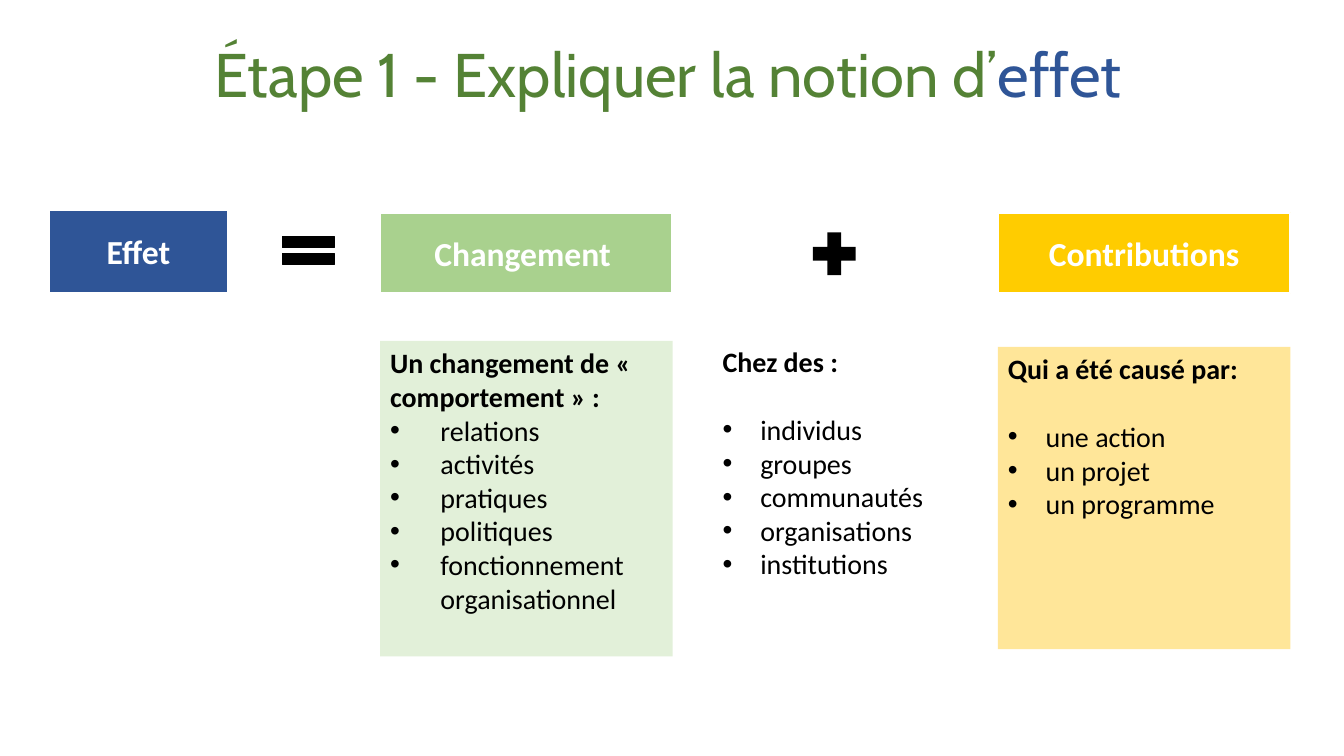
import pptx
import pptx.util
import pptx.dml.color
import pptx.enum.shapes
import pptx.enum.text
import pptx.oxml.ns
import lxml.etree
from dataclasses import dataclass

Cm = pptx.util.Cm
Pt = pptx.util.Pt
Shape = pptx.enum.shapes.MSO_SHAPE
Anchor = pptx.enum.text.MSO_ANCHOR
Align = pptx.enum.text.PP_ALIGN


@dataclass(frozen=True)
class Theme:
    title_font: str = "Cabin"
    body_font: str = "Calibri"
    title_size: int = 44
    label_size: int = 24
    body_size: int = 20
    heading_gap: float = 24.4
    white: str = "FFFFFF"
    black: str = "000000"
    blue: str = "2F5597"
    title_green: str = "548235"
    green: str = "A9D18E"
    pale_green: str = "E2F0D9"
    yellow: str = "FFCC00"
    pale_yellow: str = "FFE699"


THEME = Theme()
COLUMN_WIDTH = 7.37
CHANGE_LEFT = 9.58
CAUSE_LEFT = 25.15

TITLE = [("Étape 1 - Expliquer la notion d’", THEME.title_green), ("effet", THEME.blue)]
TITLE_AREA = (3.15, 1.17, 27.38, 1.55)

LABELS = [
    ("Effet", (1.24, 5.28, 4.5, 2.11), THEME.blue),
    ("Changement ", (CHANGE_LEFT, 5.36, COLUMN_WIDTH, 2.03), THEME.green),
    ("Contributions", (CAUSE_LEFT, 5.36, COLUMN_WIDTH, 2.03), THEME.yellow),
]

SIGNS = [
    (Shape.MATH_EQUAL, (6.88, 5.72, 1.78, 1.19), THEME.black),
    (Shape.MATH_PLUS, (20.29, 5.66, 1.47, 1.47), None),
]

PANELS = [
    dict(heading="Un changement de « comportement » :",
         items=["relations", "activités", "pratiques", "politiques",
                "fonctionnement organisationnel"],
         area=(CHANGE_LEFT, 8.59, COLUMN_WIDTH, 7.95),
         fill=THEME.pale_green, indent=1.27, gap=0),
    dict(heading="Chez des :",
         items=["individus", "groupes", "communautés", "organisations", "institutions"],
         area=(17.96, 8.56, 6.63, 7.09),
         fill=None, indent=0.95, gap=THEME.heading_gap),
    dict(heading="Qui a été causé par:",
         items=["une action", "un projet", "un programme"],
         area=(CAUSE_LEFT, 8.74, COLUMN_WIDTH, 7.62),
         fill=THEME.pale_yellow, indent=0.95, gap=THEME.heading_gap),
]


def rgb(value):
    return pptx.dml.color.RGBColor.from_string(value)


def write_text(para, text, size=THEME.body_size, color=THEME.black,
               font=THEME.body_font, bold=False, align=Align.LEFT):
    para.alignment = align
    span = para.add_run()
    span.text = text
    span.font.name = font
    span.font.size = Pt(size)
    span.font.bold = bold
    span.font.color.rgb = rgb(color)


def add_box(page, area, kind=Shape.RECTANGLE, fill=None, line=None, line_width=1.5):
    box = page.shapes.add_shape(kind, *map(Cm, area))
    box.shadow.inherit = False
    if fill:
        box.fill.solid()
        box.fill.fore_color.rgb = rgb(fill)
    else:
        box.fill.background()
    if line:
        box.line.color.rgb = rgb(line)
        box.line.width = Pt(line_width)
    else:
        box.line.fill.background()
    return box


def add_text_area(page, area):
    box = page.shapes.add_textbox(*map(Cm, area))
    box.text_frame.word_wrap = True
    return box


def add_bullet(para, indent):
    properties = para._p.get_or_add_pPr()
    properties.set("marL", str(Cm(indent)))
    properties.set("indent", str(-Cm(indent)))
    font = lxml.etree.SubElement(properties, pptx.oxml.ns.qn("a:buFont"))
    font.set("typeface", "Arial")
    bullet = lxml.etree.SubElement(properties, pptx.oxml.ns.qn("a:buChar"))
    bullet.set("char", "•")


def add_title(page):
    frame = add_text_area(page, TITLE_AREA).text_frame
    frame.vertical_anchor = Anchor.MIDDLE
    para = frame.paragraphs[0]
    para.line_spacing = 0.9
    for text, color in TITLE:
        write_text(para, text, size=THEME.title_size, color=color,
                   font=THEME.title_font, align=Align.CENTER)


def add_label(page, text, area, fill):
    frame = add_box(page, area, fill=fill, line=THEME.white).text_frame
    frame.word_wrap = True
    frame.vertical_anchor = Anchor.MIDDLE
    write_text(frame.paragraphs[0], text, size=THEME.label_size, color=THEME.white,
               bold=True, align=Align.CENTER)


def add_panel(page, heading, items, area, fill, indent, gap):
    box = add_box(page, area, fill=fill) if fill else add_text_area(page, area)
    frame = box.text_frame
    frame.word_wrap = True
    frame.vertical_anchor = Anchor.TOP
    para = frame.paragraphs[0]
    para.space_after = Pt(gap)
    write_text(para, heading, bold=True)
    for item in items:
        para = frame.add_paragraph()
        write_text(para, item)
        add_bullet(para, indent)


def main():
    deck = pptx.Presentation()
    deck.slide_width, deck.slide_height = Cm(33.87), Cm(19.05)
    page = deck.slides.add_slide(deck.slide_layouts[6])
    add_title(page)
    for label in LABELS:
        add_label(page, *label)
    for kind, area, line in SIGNS:
        add_box(page, area, kind=kind, fill=THEME.black, line=line, line_width=1)
    for panel in PANELS:
        add_panel(page, **panel)
    deck.save("out.pptx")


if __name__ == "__main__":
    main()
